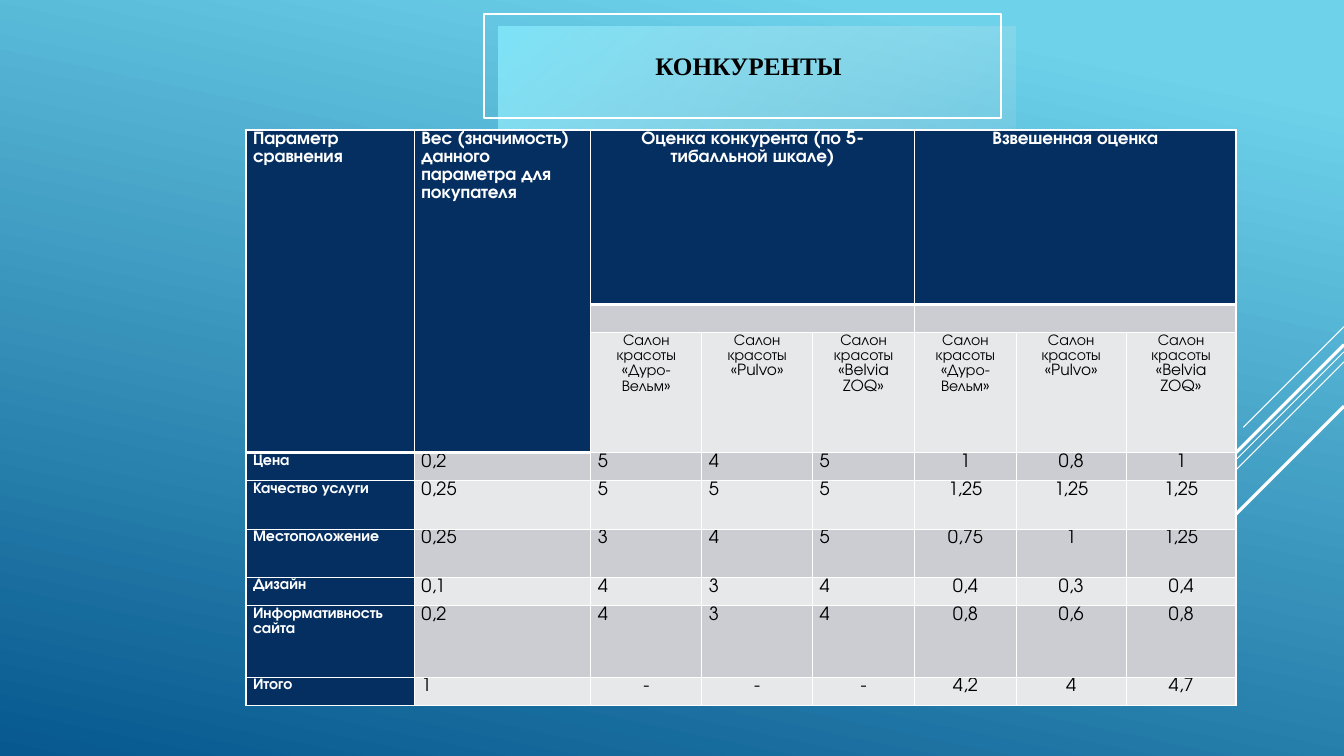
from lxml.etree import SubElement
from pptx import Presentation
from pptx.dml.color import RGBColor
from pptx.enum.shapes import MSO_CONNECTOR, MSO_SHAPE
from pptx.enum.text import MSO_ANCHOR, PP_ALIGN
from pptx.oxml import parse_xml
from pptx.oxml.ns import nsdecls, qn
from pptx.util import Inches, Pt

COLORS = {
    "white": "FFFFFF", "black": "000000", "navy": "052F61",
    "band_dark": "CCCDD2", "band_light": "E7E8EA",
    "sky": "6ED2EB", "sea": "06588E", "aqua": "80E4F8", "mist": "C0E2E9",
}
WIDTH, HEIGHT = 13.33, 7.5
RGB = {name: RGBColor.from_string(value) for name, value in COLORS.items()}


def put_text(frame, text, size, color="black", bold=False, center=False,
             font="TeX Gyre Adventor", spacing=1.07):
    paragraph = frame.paragraphs[0]
    paragraph.alignment = PP_ALIGN.CENTER if center else PP_ALIGN.LEFT
    paragraph.line_spacing = spacing
    run = paragraph.add_run()
    run.text = text
    run.font.name = font
    run.font.size = Pt(size)
    run.font.bold = bold
    run.font.color.rgb = RGB[color]


def shade(fill, angle, *stops):
    """Fill with a two-stop gradient; the angle runs clockwise."""
    fill.gradient()
    fill.gradient_angle = 360 - angle
    for stop, (position, color) in zip(fill.gradient_stops, stops):
        stop.position = position
        stop.color.rgb = RGB[color]


deck = Presentation()
deck.slide_width, deck.slide_height = Inches(WIDTH), Inches(HEIGHT)
slide = deck.slides.add_slide(deck.slide_layouts[5])
shapes = slide.shapes
shade(slide.background.fill, 102, (0.1, "sky"), (1, "sea"))

# Diagonal rays at 45 degrees from the right edge: start height, reach, weight
for start, reach, weight in [(3.24, 1, 0.75), (3.49, 3.26, 0.75), (3.59, 2.08, 0.75),
                             (3.42, 1.91, 2.25), (4.03, 1.39, 2.25)]:
    ray = shapes.add_connector(MSO_CONNECTOR.STRAIGHT, Inches(WIDTH), Inches(start),
                               Inches(WIDTH - reach), Inches(start + reach))
    ray.line.color.rgb = RGB["white"]
    ray.line.width = Pt(weight)
    SubElement(ray._element.spPr, qn("a:effectLst"))

# Title on its shaded panel
panel = shapes.add_shape(MSO_SHAPE.RECTANGLE, Inches(4.94), Inches(0.26),
                         Inches(5.13), Inches(1.03))
panel.shadow.inherit = False
panel.line.fill.background()
shade(panel.fill, 45, (0, "aqua"), (1, "mist"))
faded = panel._element.spPr.findall(".//" + qn("a:srgbClr"))[-1]
SubElement(faded, qn("a:alpha"), val="15000")

title = shapes.title
title.left, title.top = Inches(2.44), Inches(0.12)
title.width, title.height = Inches(9.97), Inches(1.05)
title.text_frame.vertical_anchor = MSO_ANCHOR.MIDDLE
put_text(title.text_frame, "КОНКУРЕНТЫ", 18, bold=True, center=True,
         font="Times New Roman", spacing=1)
panel._element.addnext(title._element)

# Comparison of competitors
salons = [f"Салон красоты «{name}»" for name in ("Дуро-Вельм", "Pulvo", "Belvia ZOQ")]
rows = [
    ["Параметр сравнения", "Вес (значимость) данного параметра для покупателя",
     "Оценка конкурента (по 5-тибалльной шкале)", "", "", "Взвешенная оценка", "", ""],
    [""] * 8,
    ["", ""] + salons * 2,
    ["Цена", "0,2", "5", "4", "5", "1", "0,8", "1"],
    ["Качество услуги", "0,25", "5", "5", "5", "1,25", "1,25", "1,25"],
    ["Местоположение", "0,25", "3", "4", "5", "0,75", "1", "1,25"],
    ["Дизайн", "0,1", "4", "3", "4", "0,4", "0,3", "0,4"],
    ["Информативность сайта", "0,2", "4", "3", "4", "0,8", "0,6", "0,8"],
    ["Итого", "1", "-", "-", "-", "4,2", "4", "4,7"],
]
column_widths = [1.67, 1.75, 1.1, 1.1, 1.01, 1.01, 1.09, 1.09]
row_heights = [1.73, 0.28, 1.19, 0.28, 0.48, 0.48, 0.28, 0.71, 0.28]
HEADER_ROWS = 3

table = shapes.add_table(len(rows), len(column_widths), Inches(2.44), Inches(1.29),
                         Inches(sum(column_widths)), Inches(sum(row_heights))).table
for column, width in zip(table.columns, column_widths):
    column.width = Inches(width)
for row, height in zip(table.rows, row_heights):
    row.height = Inches(height)
for c in (0, 1):
    table.cell(0, c).merge(table.cell(HEADER_ROWS - 1, c))
for r in (0, 1):
    for c in (2, 5):
        table.cell(r, c).merge(table.cell(r, c + 2))

for r, values in enumerate(rows):
    for c, value in enumerate(values):
        cell = table.cell(r, c)
        in_header = r < HEADER_ROWS
        is_heading = r == 0 or c == 0 or (in_header and c == 1)
        is_small = r in (1, 2) or (c == 0 and not in_header)
        cell.margin_left = cell.margin_right = Inches(0.07)
        cell.margin_top = cell.margin_bottom = 0
        put_text(cell.text_frame, value, 11 if is_small else 13,
                 color="white" if is_heading else "black", bold=is_heading,
                 center=c >= 5 or value == "-" or (in_header and c >= 2))
        heavy_bottom = r == 0 or (r == HEADER_ROWS - 1 and c < 2)
        for side in "LRTB":
            weight = 3 if side == "B" and heavy_bottom else 1
            cell._tc.get_or_add_tcPr().append(parse_xml(
                f'<a:ln{side} {nsdecls("a")} w="{Pt(weight)}"><a:solidFill>'
                f'<a:srgbClr val="{COLORS["white"]}"/></a:solidFill></a:ln{side}>'))
        cell.fill.solid()
        band = "band_dark" if r % 2 else "band_light"
        cell.fill.fore_color.rgb = RGB["navy" if is_heading else band]

# Offset outline around the title
outline = shapes.add_shape(MSO_SHAPE.RECTANGLE, Inches(4.8), Inches(0.14),
                           Inches(5.13), Inches(1.03))
outline.shadow.inherit = False
outline.fill.background()
outline.line.color.rgb = RGB["white"]
outline.line.width = Pt(1.5)

deck.save("out.pptx")
